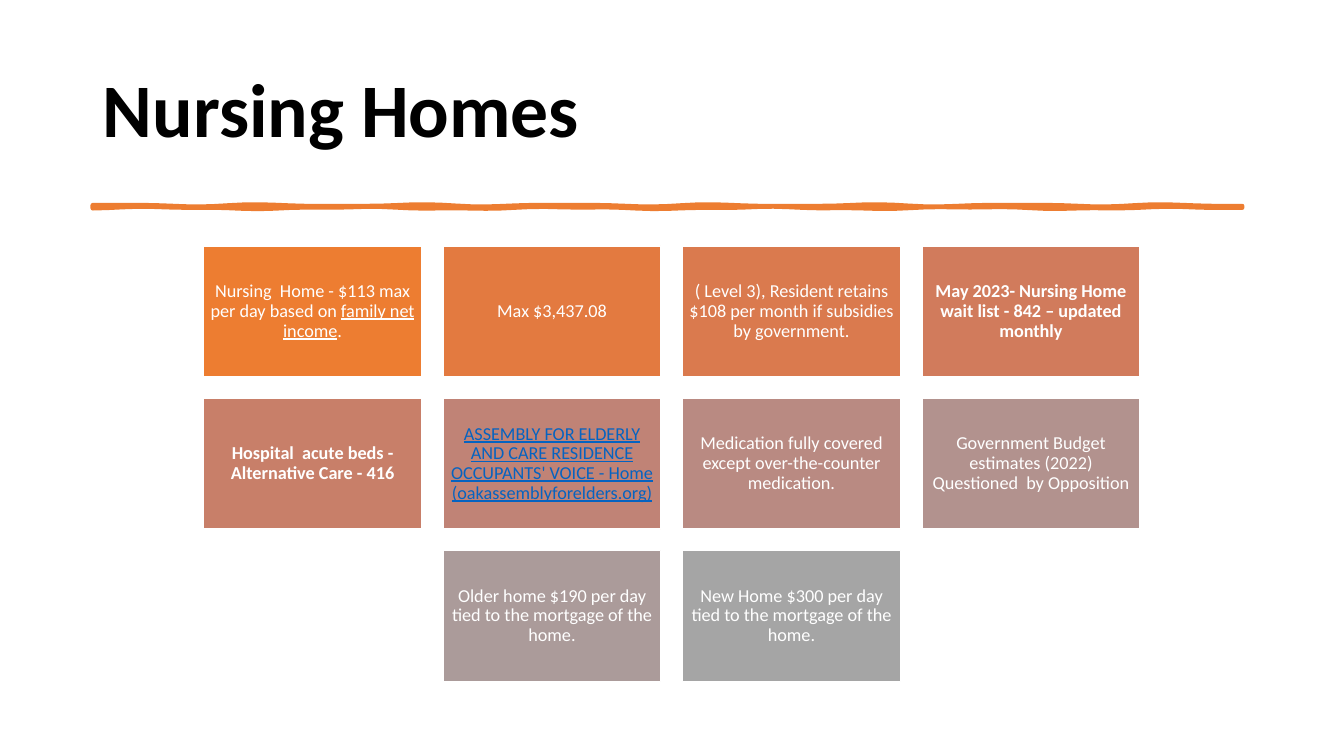
from math import sin

from pptx import Presentation
from pptx.dml.color import RGBColor as Color
from pptx.enum.shapes import MSO_AUTO_SHAPE_TYPE as ShapeType
from pptx.enum.text import MSO_ANCHOR as Anchor, MSO_AUTO_SIZE as AutoSize, PP_ALIGN as Align
from pptx.util import Inches, Pt

COLORS = {
    "title": "000000",
    "rule": "ED7D31",
    "text": "FFFFFF",
    "border": "FFFFFF",
    "link": "0563C1",
    "tiles": ["ED7D31", "E37A40", "DA7A4E", "D17B5C", "C87F69",
              "C08376", "B98A82", "B2928E", "AB9B9A", "A5A5A5"],
}
GRID = {"left": 2.02, "top": 2.44, "column": 2.375, "row": 1.51,
        "width": 2.16, "height": 1.3, "columns": 4}
PLAIN = {"name": "Calibri", "size": Pt(13), "bold": False, "underline": False}
BOLD = {**PLAIN, "bold": True}
UNDERLINED = {**PLAIN, "underline": True}
TITLE = {**BOLD, "size": Pt(54)}
TILE_FRAME = {"word_wrap": True, "vertical_anchor": Anchor.MIDDLE,
              **{f"margin_{side}": Inches(0.05) for side in ("left", "right", "top", "bottom")}}
TITLE_FRAME = {"word_wrap": True, "vertical_anchor": Anchor.MIDDLE, "auto_size": AutoSize.NONE}
TILE_PARAGRAPH = {"alignment": Align.CENTER, "line_spacing": 0.9, "space_after": Pt(4.55)}
TITLE_PARAGRAPH = {"alignment": Align.LEFT, "line_spacing": 0.9}

TILES = [
    [("Nursing  Home - $113 max per day based on ", PLAIN, "text"),
     ("family net income", UNDERLINED, "text"), (".", PLAIN, "text")],
    [("Max $3,437.08", PLAIN, "text")],
    [("( Level 3), Resident retains $108 per month if subsidies by government.", PLAIN, "text")],
    [("May 2023- Nursing Home wait list - 842 – updated monthly", BOLD, "text")],
    [("Hospital  acute beds - Alternative Care - 416", BOLD, "text")],
    [("ASSEMBLY FOR ELDERLY AND CARE RESIDENCE OCCUPANTS' VOICE - Home "
      "(oakassemblyforelders.org)", UNDERLINED, "link")],
    [("Medication fully covered except over-the-counter medication.", PLAIN, "text")],
    [("Government Budget estimates (2022) Questioned  by Opposition", PLAIN, "text")],
    [("Older home $190 per day tied to the mortgage of the home.", PLAIN, "text")],
    [("New Home $300 per day tied to the mortgage of the home.", PLAIN, "text")],
]


def apply_format(target, values):
    """Set every attribute named in a dict of format values."""
    for name, value in values.items():
        setattr(target, name, value)


def write_text(shape, runs, frame_format, paragraph_format):
    """Fill a shape with one formatted paragraph of runs."""
    apply_format(shape.text_frame, frame_format)
    paragraph = shape.text_frame.paragraphs[0]
    apply_format(paragraph, paragraph_format)
    for text, font_format, color in runs:
        run = paragraph.add_run()
        run.text = text
        apply_format(run.font, font_format)
        run.font.color.rgb = Color.from_string(COLORS[color])


def paint(shape, fill, line, width):
    """Give a shape a flat fill and an outline without shadow."""
    shape.shadow.inherit = False
    shape.fill.solid()
    shape.fill.fore_color.rgb = Color.from_string(fill)
    shape.line.color.rgb = Color.from_string(line)
    shape.line.width = Pt(width)


def add_title(slide, text):
    """Place the slide title in its placeholder."""
    title = slide.shapes.title
    apply_format(title, {"left": Inches(0.92), "top": Inches(0.4),
                         "width": Inches(11.5), "height": Inches(1.45)})
    write_text(title, [(text, TITLE, "title")], TITLE_FRAME, TITLE_PARAGRAPH)


def add_brush_rule(slide, left=0.92, width=11.4, top=2.04, steps=76):
    """Draw a slightly wavy brush stroke below the title."""
    places = [left + width * step / steps for step in range(steps + 1)]
    upper = [(x, top + 0.008 * sin(4.2 * x) + 0.004 * sin(7 * x)) for x in places]
    lower = [(x, top + 0.02 + 0.008 * sin(3.1 * x) + 0.004 * sin(8 * x)) for x in places]
    outline = [(Inches(x), Inches(y)) for x, y in upper + lower[::-1]]
    builder = slide.shapes.build_freeform(*outline[0])
    builder.add_line_segments(outline[1:], close=True)
    paint(builder.convert_to_shape(), COLORS["rule"], COLORS["rule"], 3.25)


def add_tile(slide, column, row, fill, runs):
    """Add one coloured tile at a grid column and row."""
    tile = slide.shapes.add_shape(
        ShapeType.RECTANGLE,
        Inches(GRID["left"] + column * GRID["column"]),
        Inches(GRID["top"] + row * GRID["row"]),
        Inches(GRID["width"]), Inches(GRID["height"]))
    paint(tile, fill, COLORS["border"], 1)
    write_text(tile, runs, TILE_FRAME, TILE_PARAGRAPH)


def add_tiles(slide):
    """Lay the tiles out row by row, centring a short last row."""
    columns = GRID["columns"]
    for index, (fill, runs) in enumerate(zip(COLORS["tiles"], TILES)):
        row, column = divmod(index, columns)
        filled = min(columns, len(TILES) - row * columns)
        add_tile(slide, column + (columns - filled) / 2, row, fill, runs)


def main():
    """Build the nursing homes slide."""
    presentation = Presentation()
    apply_format(presentation, {"slide_width": Inches(13.33), "slide_height": Inches(7.5)})
    slide = presentation.slides.add_slide(presentation.slide_layouts.get_by_name("Title Only"))
    add_title(slide, "Nursing Homes")
    add_brush_rule(slide)
    add_tiles(slide)
    presentation.save("out.pptx")


if __name__ == "__main__":
    main()
